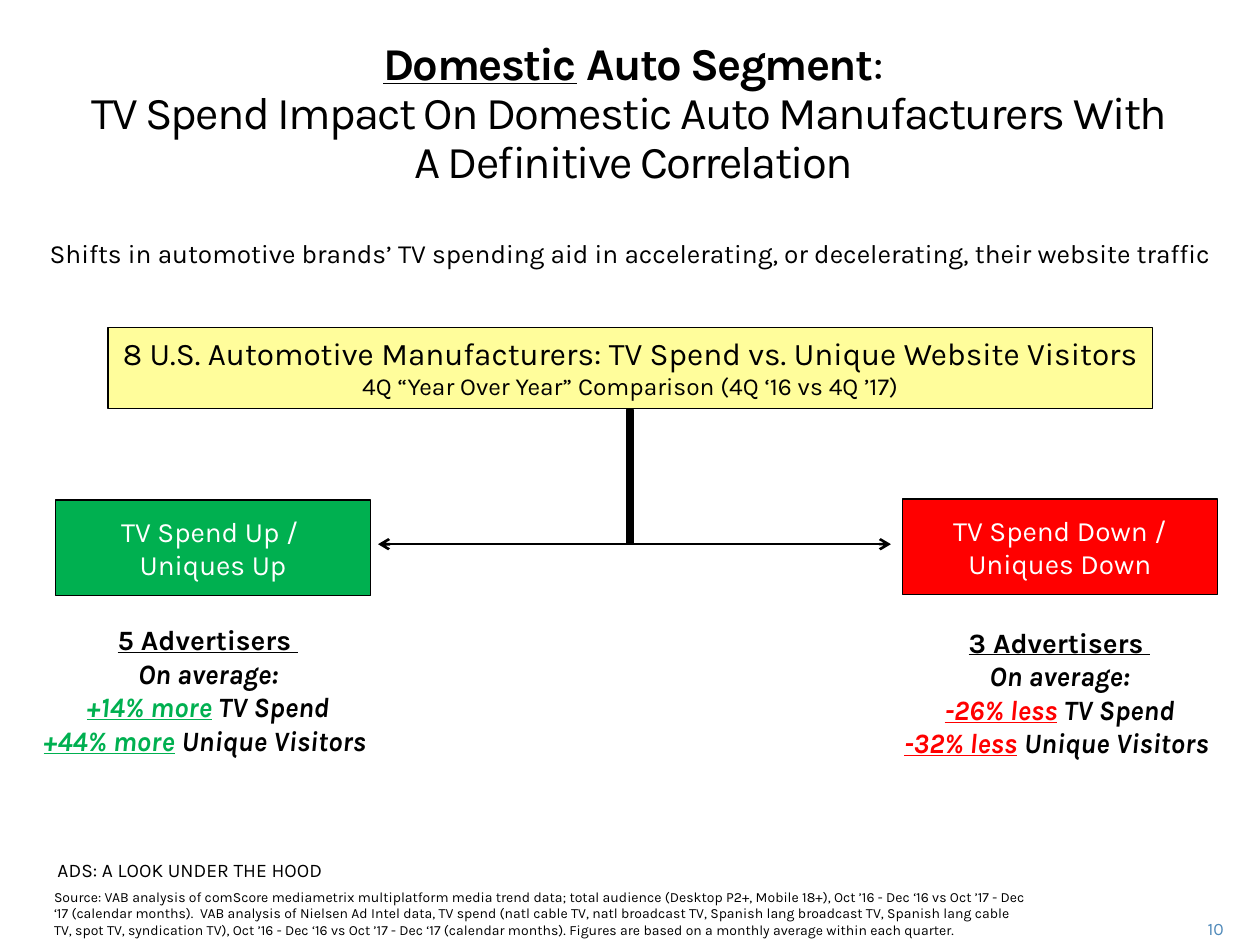
import pptx
import pptx.util
import pptx.dml.color
import pptx.enum.shapes
import pptx.enum.text
import pptx.oxml.ns
from lxml import etree

Cm, Pt = pptx.util.Cm, pptx.util.Pt
ALIGN = pptx.enum.text.PP_ALIGN
ANCHOR = pptx.enum.text.MSO_ANCHOR
SHAPES = pptx.enum.shapes.MSO_SHAPE
BLACK, WHITE, GREEN, RED = "000000", "FFFFFF", "00B050", "FF0000"
YELLOW, BLUE = "FFFD9B", "508ABA"

# Content: each paragraph is a list of (text, format) runs
TITLE = [
    [("Domestic", {"bold": True, "underline": True}),
     (" Auto Segment", {"bold": True}), (":", {})],
    [("TV Spend Impact On Domestic Auto Manufacturers With ", {})],
    [("A Definitive Correlation", {})],
]
SUBTITLE = [[("Shifts in automotive brands’ TV spending aid in accelerating, "
              "or decelerating, their website traffic", {})]]
HEADING = [
    [("8 U.S. Automotive Manufacturers: TV Spend vs. Unique Website Visitors", {})],
    [("4Q “Year Over Year” Comparison (4Q ‘16 vs 4Q ’17)", {"size": Pt(14)})],
]
FOOTER = [[("ADS: A LOOK UNDER THE HOOD", {})]]
SOURCE = [[(
    "Source: VAB analysis of comScore mediametrix multiplatform media trend data; "
    "total audience (Desktop P2+, Mobile 18+), Oct ’16 - Dec ‘16 vs Oct ’17 - Dec ‘17 "
    "(calendar months).  VAB analysis of Nielsen Ad Intel data, TV spend (natl cable TV, "
    "natl broadcast TV, Spanish lang broadcast TV, Spanish lang cable TV, spot TV, "
    "syndication TV), Oct ’16 - Dec ‘16 vs Oct ’17 - Dec ‘17 (calendar months). "
    "Figures are based on a monthly average within each quarter.", {})]]
PAGE_NUMBER = [[("10", {})]]

# Places are left, top, width, height in centimetres
OUTCOMES = [
    {"label": ["TV Spend Up / ", "Uniques Up"], "color": GREEN,
     "box": (1.12, 10.08, 6.35, 1.93), "result": (0.03, 12.42, 8.33, 2.97),
     "count": "5 Advertisers ", "spend": "+14% more", "visits": "+44% more",
     "arrow_end": 7.62},
    {"label": ["TV Spend Down / Uniques Down"], "color": RED,
     "box": (18.19, 10.06, 6.35, 1.93), "result": (17.45, 12.47, 7.82, 2.97),
     "count": "3 Advertisers ", "spend": "-26% less", "visits": "-32% less",
     "arrow_end": 17.96},
]
ARROW_Y = 10.97
STEM = (12.64, 8.25, 0.12, 2.72)


def rgb(value):
    return pptx.dml.color.RGBColor.from_string(value)


def write(box, paragraphs, size, color=BLACK, align=ALIGN.CENTER,
          anchor=ANCHOR.TOP, side=0.25):
    frame = box.text_frame
    settings = {"word_wrap": True, "vertical_anchor": anchor,
                "margin_left": Cm(side), "margin_right": Cm(side)}
    for name, value in settings.items():
        setattr(frame, name, value)
    for index, spans in enumerate(paragraphs):
        para = frame.add_paragraph() if index else frame.paragraphs[0]
        para.alignment = align
        for text, changes in spans:
            span = para.add_run()
            span.text = text
            values = {"name": "Karla", "size": Pt(size), **changes}
            span.font.color.rgb = rgb(values.pop("color", color))
            for name, value in values.items():
                setattr(span.font, name, value)
    return box


def add_text(page, place, paragraphs, size, **options):
    box = page.shapes.add_textbox(*map(Cm, place))
    return write(box, paragraphs, size, **options)


def add_rectangle(page, place, fill):
    shape = page.shapes.add_shape(SHAPES.RECTANGLE, *map(Cm, place))
    shape.shadow.inherit = False
    shape.fill.solid()
    shape.fill.fore_color.rgb = rgb(fill)
    shape.line.color.rgb = rgb(BLACK)
    shape.line.width = Pt(0.75)
    return shape


def add_arrow(page, stem, end_x):
    start_x = STEM[0] + STEM[2] / 2
    arrow = page.shapes.add_connector(
        pptx.enum.shapes.MSO_CONNECTOR.STRAIGHT,
        Cm(start_x), Cm(ARROW_Y), Cm(end_x), Cm(ARROW_Y))
    arrow.begin_connect(stem, 2)
    arrow.line.color.rgb = rgb(BLACK)
    arrow.line.width = Pt(1.5)
    qn = pptx.oxml.ns.qn
    etree.SubElement(arrow.line._get_or_add_ln(), qn("a:tailEnd"), type="arrow")
    etree.SubElement(arrow._element.spPr, qn("a:effectLst"))


def result_lines(outcome):
    strong = {"bold": True, "italic": True}
    accent = {**strong, "underline": True, "color": outcome["color"]}
    return [
        [(outcome["count"], {"bold": True, "underline": True})],
        [("On average:", strong)],
        [(outcome["spend"], accent), (" TV Spend", strong)],
        [(outcome["visits"], accent), (" ", {}), ("Unique Visitors ", strong)],
    ]


def main():
    deck = pptx.Presentation()
    deck.slide_width, deck.slide_height = Cm(25.4), Cm(19.05)
    page = deck.slides.add_slide(deck.slide_layouts[6])

    # Title and subtitle
    title = add_text(page, (0.56, 0.58, 24.43, 3.35), TITLE, 26)
    for para in title.text_frame.paragraphs:
        for span in para.runs:
            span.font._element.set("spc", "-100")
    for para in title.text_frame.paragraphs[1:]:
        para.line_spacing = Pt(28)
    add_text(page, (0.48, 4.65, 24.46, 0.89), SUBTITLE, 15)

    # Heading with the stem that splits into two outcomes
    heading = add_rectangle(page, (2.18, 6.6, 21.06, 1.63), YELLOW)
    write(heading, HEADING, 18, side=0.15)
    stem = add_rectangle(page, STEM, BLACK)
    for outcome in OUTCOMES:
        box = add_rectangle(page, outcome["box"], outcome["color"])
        label = [[(line, {})] for line in outcome["label"]]
        write(box, label, 16, color=WHITE, anchor=ANCHOR.MIDDLE)
        add_text(page, outcome["result"], result_lines(outcome), 16,
                 anchor=ANCHOR.MIDDLE)
        add_arrow(page, stem, outcome["arrow_end"])

    # Footer, source and page number
    add_text(page, (0.91, 17.17, 7.95, 1.19), FOOTER, 11, align=ALIGN.LEFT)
    add_text(page, (0.84, 17.78, 20.17, 1.27), SOURCE, 8, align=ALIGN.LEFT)
    add_text(page, (23.37, 18.39, 1.55, 0.64), PAGE_NUMBER, 10,
             color=BLUE, align=ALIGN.RIGHT)

    deck.save("out.pptx")


if __name__ == "__main__":
    main()
